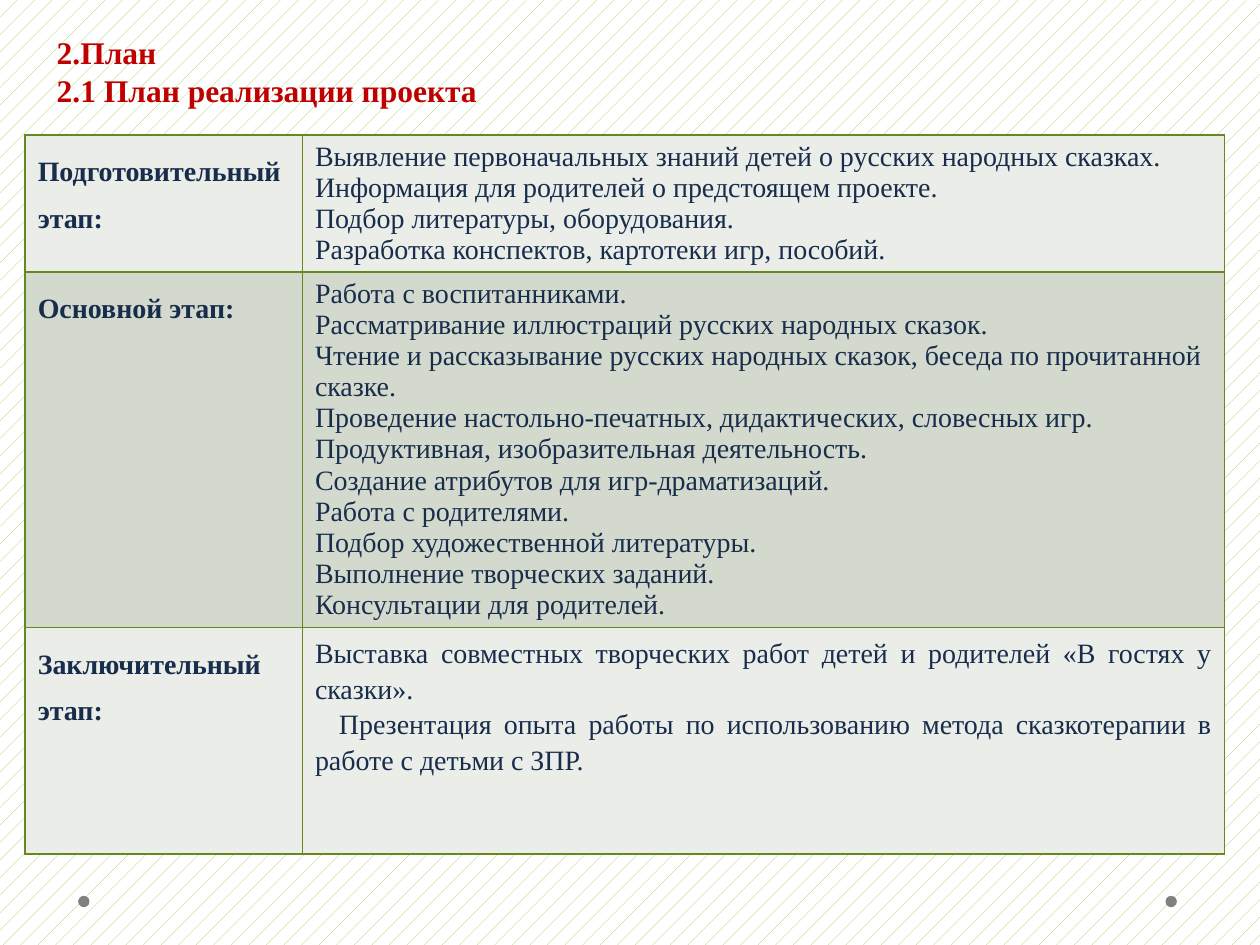
from lxml.etree import SubElement
from pptx import Presentation
from pptx.dml.color import RGBColor
from pptx.enum.dml import MSO_PATTERN
from pptx.enum.shapes import MSO_SHAPE as SHAPE
from pptx.enum.text import MSO_ANCHOR as ANCHOR, MSO_AUTO_SIZE as AUTO, PP_ALIGN as ALIGN
from pptx.oxml.ns import qn
from pptx.util import Inches, Pt

FONT = "Times New Roman"
RED = RGBColor(0xC0, 0x00, 0x00)
NAVY = RGBColor(0x18, 0x2C, 0x4B)
GREEN = RGBColor(0x63, 0x89, 0x1F)
LIME = RGBColor(0x92, 0xD0, 0x50)
WHITE = RGBColor(0xFF, 0xFF, 0xFF)
GRAY = RGBColor(0x80, 0x80, 0x80)
BANDS = [RGBColor(0xEA, 0xED, 0xE8), RGBColor(0xD3, 0xDA, 0xCD)]

TITLE = ["2.План", "2.1 План реализации проекта"]
STAGES = [
    ("Подготовительный этап:", [
        "Выявление первоначальных знаний детей о русских народных сказках.",
        "Информация для родителей о предстоящем проекте.",
        "Подбор литературы, оборудования.",
        "Разработка конспектов, картотеки игр, пособий.",
    ]),
    ("Основной этап:", [
        "Работа с воспитанниками.",
        "Рассматривание иллюстраций русских народных сказок.",
        "Чтение и рассказывание русских народных сказок, беседа по прочитанной сказке.",
        "Проведение настольно-печатных, дидактических, словесных игр.",
        "Продуктивная, изобразительная деятельность.",
        "Создание атрибутов для игр-драматизаций.",
        "Работа с родителями.",
        "Подбор художественной литературы.",
        "Выполнение творческих заданий.",
        "Консультации для родителей.",
    ]),
    ("Заключительный этап:", [
        "Выставка совместных творческих работ детей и родителей «В гостях у сказки».",
        "Презентация опыта работы по использованию метода сказкотерапии в работе с детьми с ЗПР.",
    ]),
]
COL_WIDTHS = [2.2, 7.32]
ROW_HEIGHTS = [1.09, 2.82, 1.8]
DOT_LEFTS = [0.62, 9.25]


def write(tf, lines, size, color, bold=False, spacing=None, align=ALIGN.LEFT):
    for i, line in enumerate(lines):
        p = tf.paragraphs[0] if i == 0 else tf.add_paragraph()
        p.alignment = align
        p.line_spacing = spacing
        r = p.add_run()
        r.text = line
        r.font.name = FONT
        r.font.size = Pt(size)
        r.font.bold = bold
        r.font.color.rgb = color


def set_cell(cell, fill):
    """Draw a thin green border on all sides, then fill the cell."""
    tc_pr = cell._tc.get_or_add_tcPr()
    for side in ("lnL", "lnR", "lnT", "lnB"):
        ln = SubElement(tc_pr, qn(f"a:{side}"), w=str(Pt(1)))
        solid = SubElement(ln, qn("a:solidFill"))
        SubElement(solid, qn("a:srgbClr"), val=str(GREEN))
    cell.fill.solid()
    cell.fill.fore_color.rgb = fill


prs = Presentation()
prs.slide_width, prs.slide_height = Inches(10), Inches(7.5)
s = prs.slides.add_slide(prs.slide_layouts[5])

bg = s.background.fill
bg.patterned()
bg.pattern = MSO_PATTERN.PERCENT_5
bg.fore_color.rgb = LIME
bg.back_color.rgb = WHITE

for left in DOT_LEFTS:
    dot = s.shapes.add_shape(SHAPE.OVAL, Inches(left), Inches(7.11), Inches(0.09), Inches(0.09))
    dot.shadow.inherit = False
    dot.fill.solid()
    dot.fill.fore_color.rgb = GRAY
    dot.line.fill.background()

title = s.shapes.title
title.left, title.top, title.width, title.height = map(Inches, (0.35, 0.21, 9.37, 0.71))
tf = title.text_frame
tf.word_wrap = True
tf.auto_size = AUTO.NONE
tf.vertical_anchor = ANCHOR.TOP
write(tf, TITLE, 18, RED, bold=True)

table = s.shapes.add_table(
    len(STAGES), len(COL_WIDTHS), Inches(0.2), Inches(1.07),
    Inches(sum(COL_WIDTHS)), Inches(sum(ROW_HEIGHTS))).table
table.first_row = False
for col, width in zip(table.columns, COL_WIDTHS):
    col.width = Inches(width)
for i, (stage, tasks) in enumerate(STAGES):
    table.rows[i].height = Inches(ROW_HEIGHTS[i])
    name_cell, task_cell = table.rows[i].cells
    for cell in (name_cell, task_cell):
        set_cell(cell, BANDS[i % 2])
    write(name_cell.text_frame, [stage], 16, NAVY, bold=True, spacing=1.5)
    if i < len(STAGES) - 1:
        write(task_cell.text_frame, tasks, 16, NAVY)
    else:
        write(task_cell.text_frame, tasks, 16, NAVY, spacing=1.15, align=ALIGN.JUSTIFY)
        p = task_cell.text_frame.paragraphs[-1]
        p.space_after = Pt(10)
        p._p.get_or_add_pPr().set("indent", str(Inches(0.19)))

prs.save("out.pptx")
